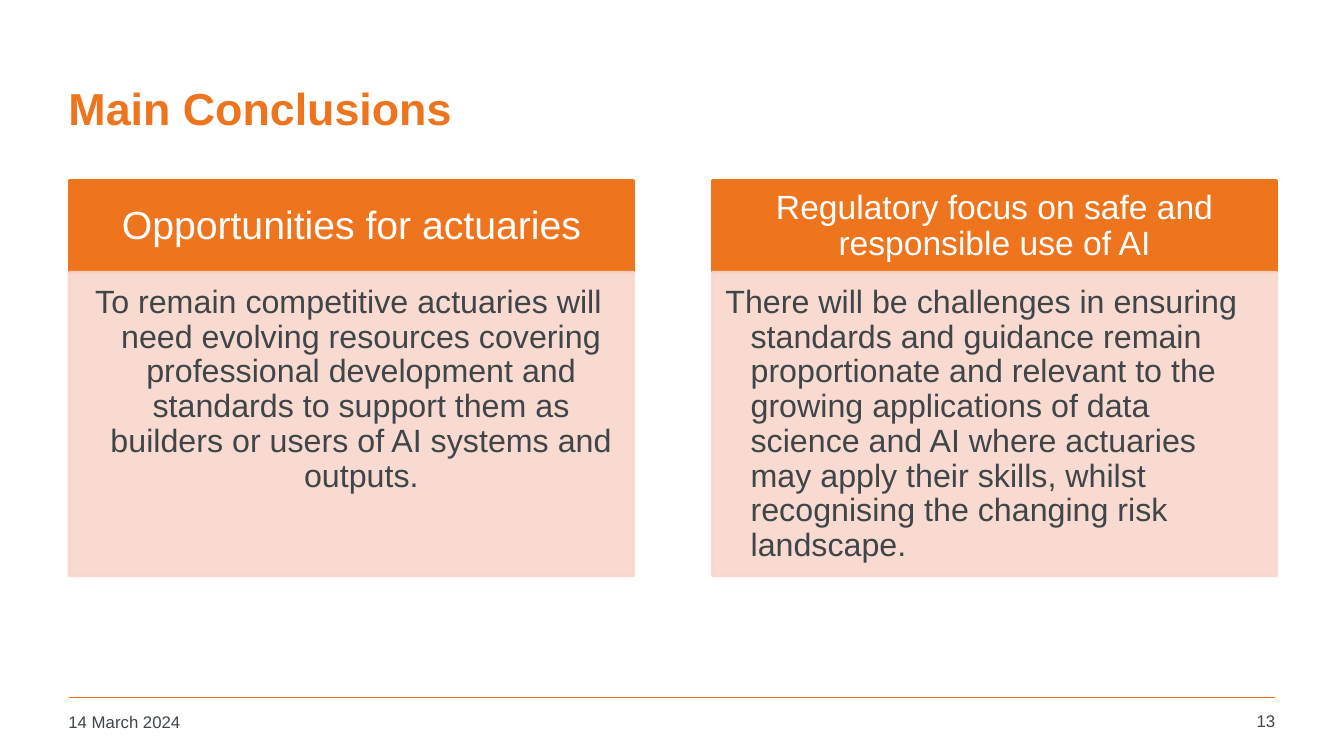
from lxml import etree
from pptx import Presentation
from pptx.dml.color import RGBColor
from pptx.enum.shapes import MSO_CONNECTOR, MSO_SHAPE
from pptx.enum.text import MSO_ANCHOR, PP_ALIGN
from pptx.oxml.ns import qn
from pptx.util import Pt

RECTANGLE = MSO_SHAPE.RECTANGLE
STRAIGHT = MSO_CONNECTOR.STRAIGHT
TOP, MIDDLE = MSO_ANCHOR.TOP, MSO_ANCHOR.MIDDLE
LEFT, CENTER, RIGHT = PP_ALIGN.LEFT, PP_ALIGN.CENTER, PP_ALIGN.RIGHT

ORANGE, PINK, GREY, WHITE = "EE741D", "F8D6CD", "3F4548", "FFFFFF"

# Column layout, in points
COLUMN_LEFT, COLUMN_STEP, COLUMN_WIDTH = 49.4, 459.4, 403.2
HEADER_TOP, HEADER_HEIGHT, BODY_HEIGHT = 129, 65.5, 216.7
HANGING = 18
BODY_INSETS = (9.4, 9.4, 13, 14.4)

# Heading, heading size, heading insets, body text, body alignment
COLUMNS = [
    ("Opportunities for actuaries", 28, (15.8, 8.6, 15.8, 8.6),
     "To remain competitive actuaries will need evolving resources covering "
     "professional development and standards to support them as builders or "
     "users of AI systems and outputs.", CENTER),
    ("Regulatory focus on safe and responsible use of AI", 24, (13.7, 7.9, 13.7, 7.9),
     "There will be challenges in ensuring standards and guidance remain "
     "proportionate and relevant to the growing applications of data science "
     "and AI where actuaries may apply their skills, whilst recognising the "
     "changing risk landscape.", LEFT),
]


def colour(value):
    return RGBColor.from_string(value)


def set_values(target, values):
    for name, value in values.items():
        setattr(target, name, value)


def write_text(box, text, size, text_colour, align=LEFT, anchor=TOP,
               insets=(7.2, 3.6, 7.2, 3.6), bold=False, spacing=1.0):
    frame = box.text_frame
    left, top, right, bottom = (Pt(inset) for inset in insets)
    set_values(frame, {"word_wrap": True, "vertical_anchor": anchor,
                       "margin_left": left, "margin_top": top,
                       "margin_right": right, "margin_bottom": bottom})
    para = frame.paragraphs[0]
    set_values(para, {"alignment": align, "line_spacing": spacing})
    span = para.add_run()
    span.text = text
    set_values(span.font, {"name": "Arial", "size": Pt(size), "bold": bold})
    span.font.color.rgb = colour(text_colour)
    return para


def add_label(page, frame, text, size, text_colour, **options):
    box = page.shapes.add_textbox(*(Pt(length) for length in frame))
    write_text(box, text, size, text_colour, **options)


def add_panel(page, frame, fill_colour, opacity=100):
    panel = page.shapes.add_shape(RECTANGLE, *(Pt(length) for length in frame))
    panel.shadow.inherit = False
    panel.line.width = Pt(2)
    panel.fill.solid()
    panel.line.fill.solid()
    for paint in (panel.fill, panel.line.fill):
        paint.fore_color.rgb = colour(fill_colour)
    if opacity < 100:
        for tint in panel.fill._xPr.iter(qn("a:srgbClr")):
            etree.SubElement(tint, qn("a:alpha"), val=str(opacity * 1000))
    return panel


def add_column(page, left, heading, size, insets, body, align):
    # Heading band
    header = add_panel(page, (left, HEADER_TOP, COLUMN_WIDTH, HEADER_HEIGHT), ORANGE)
    write_text(header, heading, size, WHITE, align=CENTER, anchor=MIDDLE,
               insets=insets, spacing=0.9)
    # Body with hanging indent
    panel = add_panel(page, (left, HEADER_TOP + HEADER_HEIGHT, COLUMN_WIDTH, BODY_HEIGHT),
                      PINK, opacity=90)
    para = write_text(panel, body, 23, GREY, align=align, insets=BODY_INSETS, spacing=0.9)
    para.level = 1
    properties = para._p.get_or_add_pPr()
    properties.set("marL", str(Pt(HANGING)))
    properties.set("indent", str(-Pt(HANGING)))


def add_rule(page, left, right, top):
    rule = page.shapes.add_connector(STRAIGHT, Pt(left), Pt(top), Pt(right), Pt(top))
    rule.line.color.rgb = colour(ORANGE)
    rule.line.width = Pt(1)
    etree.SubElement(rule._element.spPr, qn("a:effectLst"))


def main():
    deck = Presentation()
    deck.slide_width, deck.slide_height = Pt(960), Pt(540)
    page = deck.slides.add_slide(deck.slide_layouts[6])

    # Title
    add_label(page, (41.8, 31.7, 870.5, 90), "Main Conclusions", 32, ORANGE,
              anchor=MIDDLE, bold=True)

    # Conclusions
    for index, column in enumerate(COLUMNS):
        add_column(page, COLUMN_LEFT + index * COLUMN_STEP, *column)

    # Footer
    add_rule(page, 49, 910.8, 498.2)
    add_label(page, (41.8, 504.7, 211.7, 26), "14 March 2024", 12, GREY)
    add_label(page, (850.3, 504, 67.7, 26), "13", 12, GREY, align=RIGHT)

    deck.save("out.pptx")


if __name__ == "__main__":
    main()
